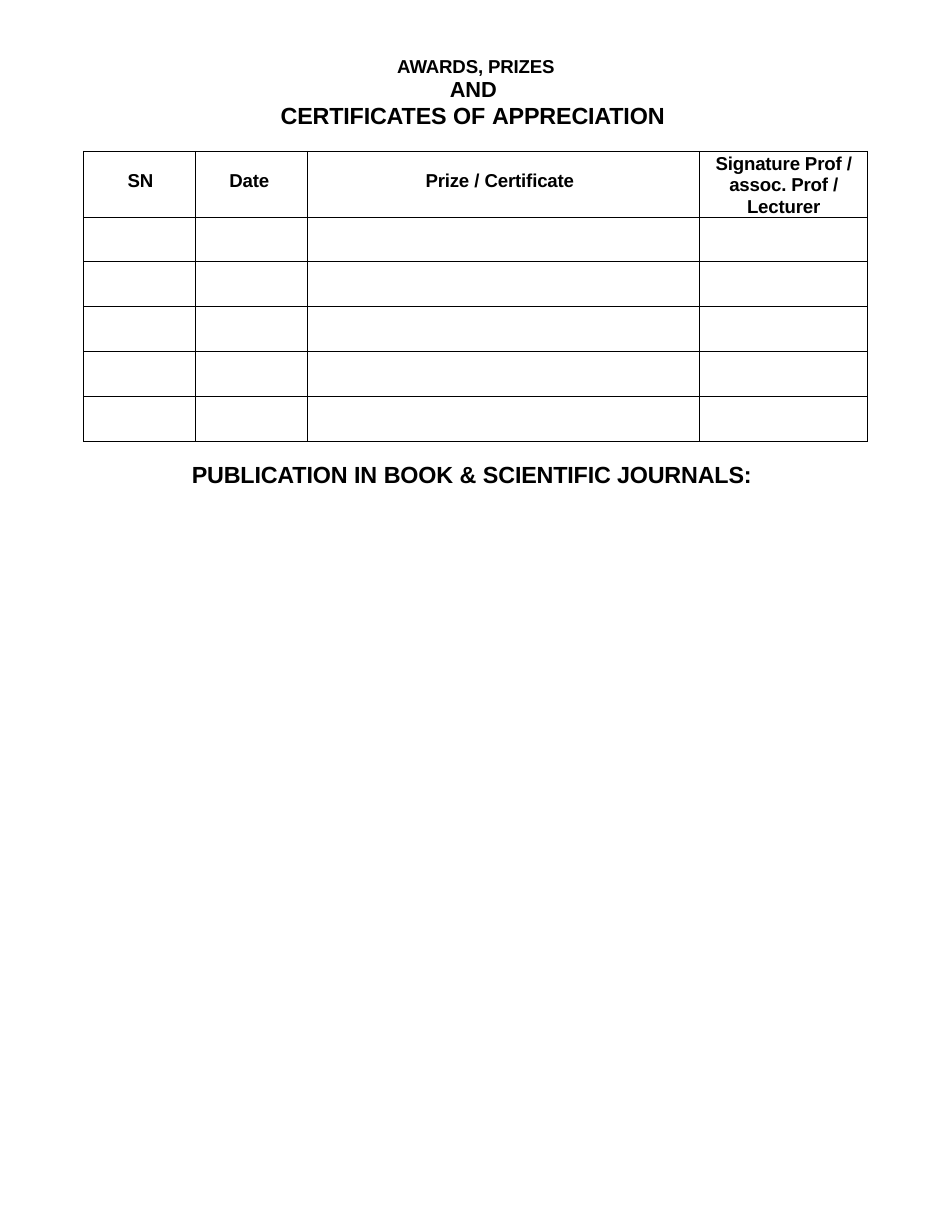
from pptx import Presentation
from pptx.dml.color import RGBColor
from pptx.enum.text import PP_ALIGN as Align
from pptx.oxml import parse_xml
from pptx.oxml.ns import nsdecls
from pptx.util import Cm, Pt

COLORS = {"ink": "000000"}
FONT = "Arial"
TIGHT, NORMAL = -10, 0


def add_runs(paragraph, runs, size):
    """Add bold (text, letter spacing) runs to a paragraph."""
    for text, spacing in runs:
        run = paragraph.add_run()
        run.text = text
        run.font.name, run.font.size, run.font.bold = FONT, Pt(size), True
        run.font.color.rgb = RGBColor.from_string(COLORS["ink"])
        run.font._element.set("spc", str(spacing))


def add_heading(slide, box, lines, align):
    """Place heading lines of (runs, size, line height, indent) in a box."""
    frame = slide.shapes.add_textbox(*map(Cm, box)).text_frame
    frame.word_wrap = True
    frame.margin_left = frame.margin_right = frame.margin_bottom = 0
    frame.margin_top = Cm(0.03)
    for index, (runs, size, line_height, indent) in enumerate(lines):
        line = frame.add_paragraph() if index else frame.paragraphs[0]
        line.alignment = align
        line._p.get_or_add_pPr().set("marL", str(Cm(indent)))
        if line_height:
            line.line_spacing = Pt(line_height)
        if index == 0:
            line.space_before = Pt(1)
        add_runs(line, runs, size)


def add_borders(cell):
    """Draw a thin line on every side of a cell."""
    properties = cell._tc.get_or_add_tcPr()
    for index, side in enumerate(("lnL", "lnR", "lnT", "lnB")):
        properties.insert(index, parse_xml(
            f'<a:{side} {nsdecls("a")} w="{Pt(0.5)}"><a:solidFill>'
            f'<a:srgbClr val="{COLORS["ink"]}"/></a:solidFill></a:{side}>'))


def add_awards_table(slide, box, widths, heights, headers):
    """Place the awards grid with its header row and empty rows."""
    grid = slide.shapes.add_table(len(heights), len(widths), *map(Cm, box)).table
    for column, width in zip(grid.columns, widths):
        column.width = Cm(width)
    for row, height in zip(grid.rows, heights):
        row.height = Cm(height)
    for cell in grid.iter_cells():
        cell.margin_left = cell.margin_right = 0
        cell.margin_top = cell.margin_bottom = 0
        cell.fill.background()
        add_borders(cell)
    for cell, (runs, align, left, top, right, leading) in zip(grid.rows[0].cells, headers):
        cell.margin_left, cell.margin_top, cell.margin_right = Cm(left), Cm(top), Cm(right)
        title = cell.text_frame.paragraphs[0]
        title.alignment = align
        if leading:
            title.line_spacing = Pt(leading)
        add_runs(title, runs, 12)


def main():
    """Build the awards and publications page."""
    deck = Presentation()
    deck.slide_width, deck.slide_height = Cm(21.59), Cm(27.94)
    page = deck.slides.add_slide(deck.slide_layouts[6])
    add_heading(page, (6.25, 1.22, 8.94, 1.75), [
        ([("AWARDS, PRIZES", TIGHT)], 12, 14.1, 0.15),
        ([("AND", TIGHT)], 14, 16.1, 0.03),
        ([("CERTIFICATES ", TIGHT), ("OF ", NORMAL), ("APPRECIATION", TIGHT)], 15, 17.6, 0),
    ], Align.CENTER)
    signature = [("Signature Prof ", TIGHT), ("/ ", NORMAL), ("assoc. Prof ", TIGHT),
                 ("/ ", NORMAL), ("Lecturer", TIGHT)]
    prize = [("Prize ", TIGHT), ("/", NORMAL), (" Certificate", TIGHT)]
    add_awards_table(
        page, (1.9, 3.43, 17.78, 6.56), (2.54, 2.54, 8.89, 3.81), [1.48] + [1.016] * 5, [
            ([("SN", TIGHT)], Align.CENTER, 0.03, 0.43, 0, None),
            ([("Date", TIGHT)], Align.LEFT, 0.76, 0.43, 0, None),
            (prize, Align.LEFT, 2.67, 0.43, 0, None),
            (signature, Align.CENTER, 0.25, 0.03, 0.25, 13.8),
        ])
    add_heading(page, (4.32, 10.41, 12.95, 0.71), [
        ([("PUBLICATION ", TIGHT), ("IN ", NORMAL), ("BOOK ", TIGHT), ("& ", NORMAL),
          ("SCIENTIFIC JOURNALS:", TIGHT)], 15, None, 0.03),
    ], Align.LEFT)
    deck.save("out.pptx")


if __name__ == "__main__":
    main()
